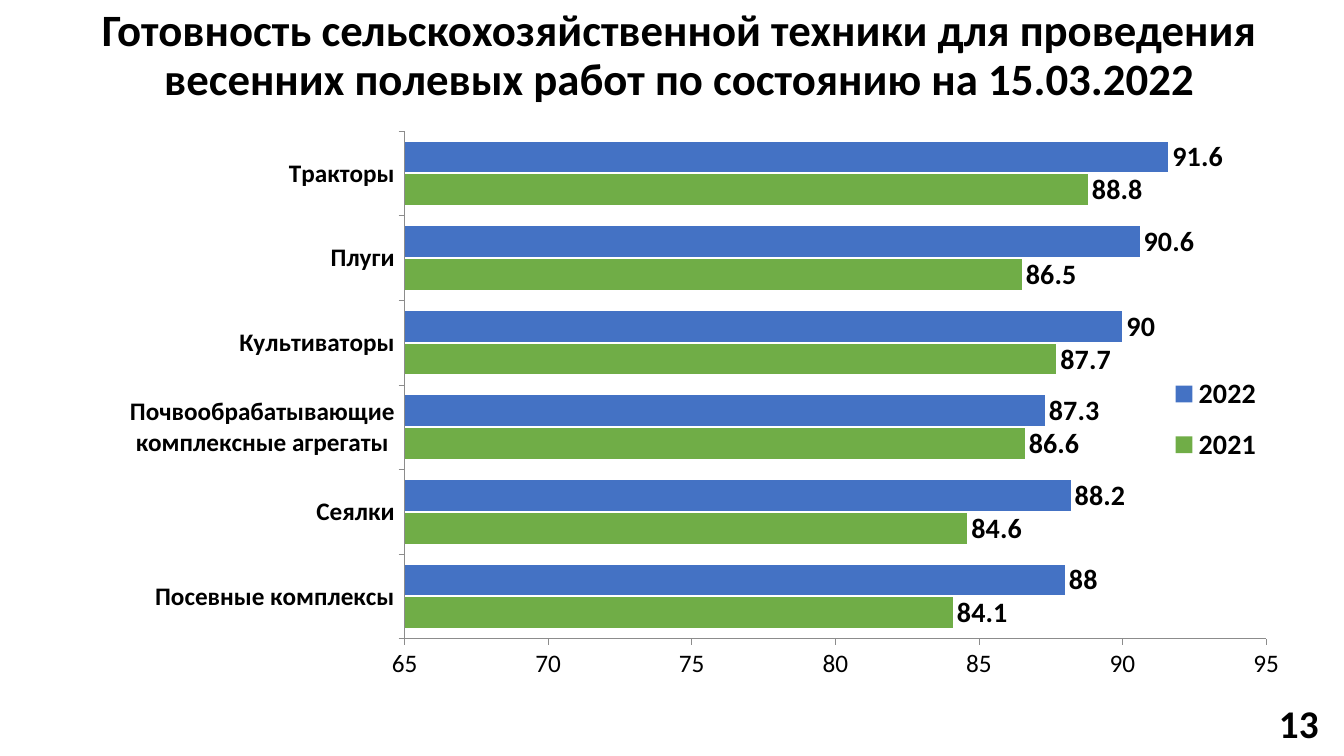
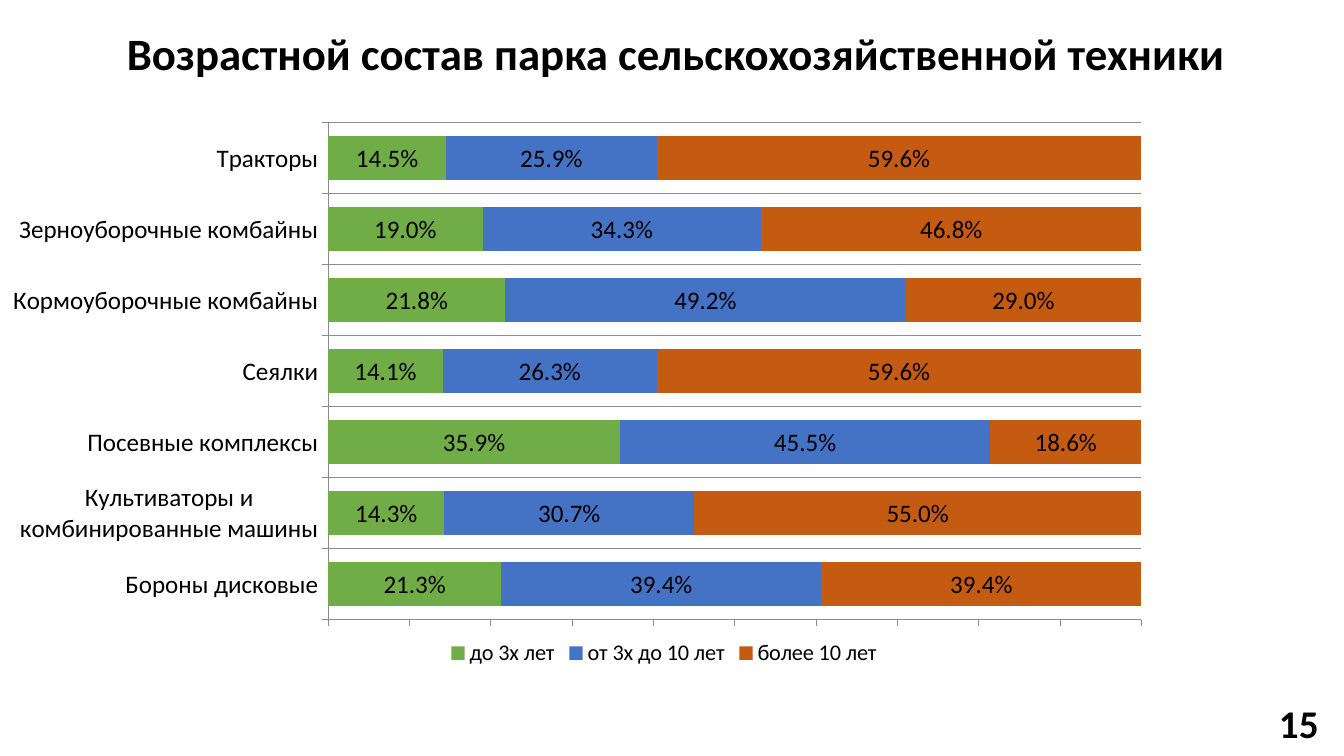
"""Build two slides on farm machinery: readiness and age structure."""
import pptx
import pptx.util
import pptx.chart.data
import pptx.dml.color
import pptx.enum.chart
import pptx.enum.text
import pptx.oxml
import pptx.oxml.ns

Pt = pptx.util.Pt
XL = pptx.enum.chart
TXT = pptx.enum.text

FONT = "Calibri"
COLORS = {"text": "000000", "axis": "8C8C8C", "green": "70AD47", "blue": "4472C4", "rust": "C55A11"}
NUMBER_BOX = (849, 502, 100, 29)

SLIDES = [
    {
        "title": "Готовность сельскохозяйственной техники для проведения "
                 "весенних полевых работ по состоянию на 15.03.2022",
        "title_box": (15, 0, 941, 80.6),
        "number": "13",
        "box": (26.6, 80.6, 895.7, 421.2),
        "type": XL.XL_CHART_TYPE.BAR_CLUSTERED,
        "cats": ["Посевные комплексы", "Сеялки", "Почвообрабатывающие комплексные агрегаты",
                 "Культиваторы", "Плуги", "Тракторы"],
        "series": [
            ("2021", "green", (84.1, 84.6, 86.6, 87.7, 86.5, 88.8)),
            ("2022", "blue", (88, 88.2, 87.3, 90, 90.6, 91.6)),
        ],
        "plot": {"gap_width": 68, "overlap": -7},
        "plot_area": (0.293, 0.031, 0.687, 0.861),
        "scale": {"minimum_scale": 65, "maximum_scale": 95, "major_unit": 5},
        "axis_labels": True,
        "cat_grid": False,
        "bold": True,
        "labels": {"number_format": "General", "position": XL.XL_LABEL_POSITION.OUTSIDE_END},
        "label_size": 20,
        "legend": {"position": XL.XL_LEGEND_POSITION.RIGHT, "include_in_layout": True},
        "legend_size": 20,
        "legend_area": (0.9, 0.42, 0.08, 0.2),
    },
    {
        "title": "Возрастной состав парка сельскохозяйственной техники",
        "title_box": (26.6, 0, 913, 80.6),
        "number": "15",
        "box": (9.4, 80.6, 924.5, 398.9),
        "type": XL.XL_CHART_TYPE.BAR_STACKED_100,
        "cats": ["Бороны дисковые", "Культиваторы и комбинированные машины", "Посевные комплексы",
                 "Сеялки", "Кормоуборочные комбайны", "Зерноуборочные комбайны", "Тракторы"],
        "series": [
            ("до 3х лет", "green", (0.213, 0.143, 0.359, 0.141, 0.218, 0.19, 0.145)),
            ("от 3х до 10 лет", "blue", (0.394, 0.307, 0.455, 0.263, 0.492, 0.343, 0.259)),
            ("более 10 лет", "rust", (0.394, 0.55, 0.186, 0.596, 0.29, 0.468, 0.596)),
        ],
        "plot": {"gap_width": 60, "overlap": 100},
        "plot_area": (0.239, 0.018, 0.632, 0.89),
        "scale": {"minimum_scale": 0, "maximum_scale": 1, "major_unit": 0.1},
        "axis_labels": False,
        "cat_grid": True,
        "bold": False,
        "labels": {"number_format": "0.0%", "position": XL.XL_LABEL_POSITION.CENTER},
        "label_size": 18,
        "legend": {"position": XL.XL_LEGEND_POSITION.BOTTOM, "include_in_layout": False},
        "legend_size": 16,
        "legend_area": None,
    },
]


def rgb(name):
    return pptx.dml.color.RGBColor.from_string(COLORS[name])


def apply(obj, values):
    for key, value in values.items():
        setattr(obj, key, value)


def style_font(font, size, bold=False):
    apply(font, {"name": FONT, "size": Pt(size), "bold": bold})
    font.color.rgb = rgb("text")


def style_line(fmt):
    fmt.line.color.rgb = rgb("axis")
    fmt.line.width = Pt(0.5)


def add_text(s, box, text, size, align, spacing):
    tf = s.shapes.add_textbox(*map(Pt, box)).text_frame
    apply(tf, {"word_wrap": True, "vertical_anchor": TXT.MSO_ANCHOR.MIDDLE})
    p = tf.paragraphs[0]
    apply(p, {"alignment": align, "line_spacing": spacing})
    r = p.add_run()
    r.text = text
    style_font(r.font, size, True)


def set_layout(parent, index, area, inner=False):
    for old in parent.findall(pptx.oxml.ns.qn("c:layout")):
        parent.remove(old)
    target = '<c:layoutTarget val="inner"/>' if inner else ""
    modes = "".join(f'<c:{k}Mode val="edge"/>' for k in "xy")
    sizes = "".join(f'<c:{k} val="{v}"/>' for k, v in zip("xywh", area))
    parent.insert(index, pptx.oxml.parse_xml(
        f'<c:layout {pptx.oxml.ns.nsdecls("c")}><c:manualLayout>'
        f'{target}{modes}{sizes}</c:manualLayout></c:layout>'))


def add_bar_chart(s, spec_):
    data = pptx.chart.data.CategoryChartData()
    data.categories = spec_["cats"]
    for name, _, values in spec_["series"]:
        data.add_series(name, values)
    chart = s.shapes.add_chart(spec_["type"], *map(Pt, spec_["box"]), data).chart
    apply(chart, {"has_title": False, "has_legend": True})
    style_font(chart.font, 18)

    plot = chart.plots[0]
    apply(plot, {**spec_["plot"], "vary_by_categories": False})
    for series, (_, color, _) in zip(plot.series, spec_["series"]):
        series.format.fill.solid()
        series.format.fill.fore_color.rgb = rgb(color)
        labels = series.data_labels
        apply(labels, {**spec_["labels"], "show_value": True, "number_format_is_linked": False})
        style_font(labels.font, spec_["label_size"], spec_["bold"])

    cat, val = chart.category_axis, chart.value_axis
    for axis, grid, bold in ((cat, spec_["cat_grid"], spec_["bold"]), (val, False, False)):
        apply(axis, {"has_major_gridlines": grid, "major_tick_mark": XL.XL_TICK_MARK.CROSS
                     if axis is None else XL.XL_TICK_MARK.OUTSIDE})
        style_line(axis.format)
        style_font(axis.tick_labels.font, 18, bold)
        if grid:
            style_line(axis.major_gridlines.format)
    apply(val, spec_["scale"])
    if not spec_["axis_labels"]:
        val.tick_label_position = XL.XL_TICK_LABEL_POSITION.NONE

    legend = chart.legend
    apply(legend, spec_["legend"])
    style_font(legend.font, spec_["legend_size"], spec_["bold"])
    if spec_["legend_area"]:
        set_layout(legend._element, 1, spec_["legend_area"])
    set_layout(plot._element.getparent(), 0, spec_["plot_area"], inner=True)


def main():
    prs = pptx.Presentation()
    apply(prs, {"slide_width": Pt(960), "slide_height": Pt(540)})
    for content in SLIDES:
        s = prs.slides.add_slide(prs.slide_layouts[6])
        add_text(s, content["title_box"], content["title"], 32, TXT.PP_ALIGN.CENTER, 0.9)
        add_bar_chart(s, content)
        add_text(s, NUMBER_BOX, content["number"], 28, TXT.PP_ALIGN.RIGHT, 1.0)
    prs.save("out.pptx")


if __name__ == "__main__":
    main()
